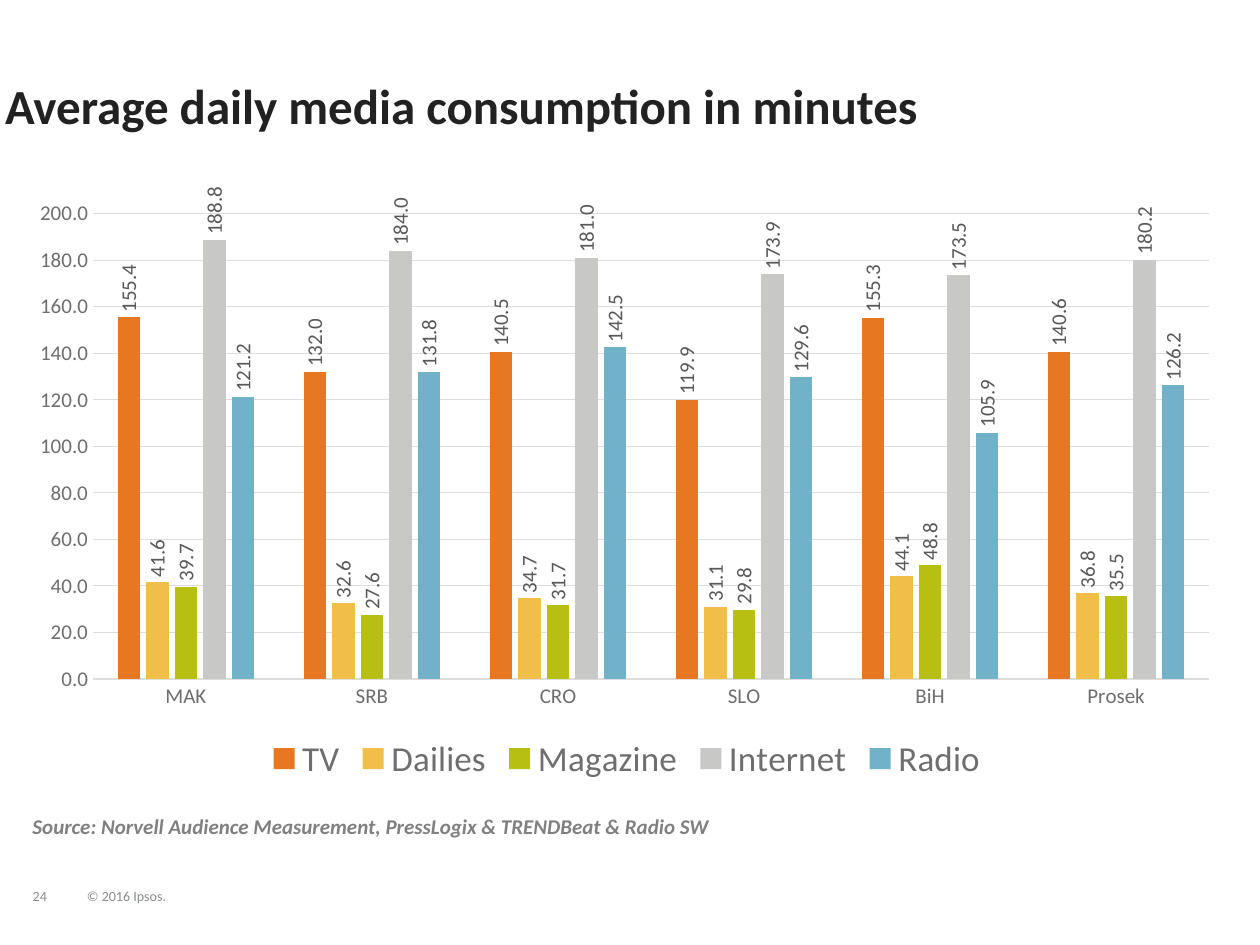
from lxml.etree import SubElement
from pptx import Presentation
from pptx.chart.data import CategoryChartData
from pptx.dml.color import RGBColor
from pptx.enum.chart import (XL_CHART_TYPE, XL_LABEL_POSITION,
                             XL_LEGEND_POSITION, XL_TICK_MARK)
from pptx.enum.text import MSO_ANCHOR
from pptx.oxml import parse_xml
from pptx.oxml.ns import nsdecls, qn
from pptx.util import Inches, Pt

FONT = "Calibri"
PALE, GREY, DARK = "DDDDDE", "6E6E71", "222223"
CATS = ["MAK", "SRB", "CRO", "SLO", "BiH", "Prosek"]
MEDIA = [
    ("TV", "E87722", [155.4, 132, 140.5, 119.9, 155.3, 140.6]),
    ("Dailies", "F1BE48", [41.6, 32.6, 34.7, 31.1, 44.1, 36.8]),
    ("Magazine", "B7BF12", [39.7, 27.6, 31.7, 29.8, 48.8, 35.5]),
    ("Internet", "C8C9C7", [188.8, 184, 181, 173.9, 173.5, 180.2]),
    ("Radio", "71B2C9", [121.2, 131.8, 142.5, 129.6, 105.9, 126.2]),
]


def rgb(code):
    return RGBColor.from_string(code)


def style(font, size, color, bold=False, italic=False):
    font.name, font.size = FONT, Pt(size)
    font.bold, font.italic = bold, italic
    font.color.rgb = rgb(color)


def rule(line):
    line.color.rgb = rgb(PALE)
    line.width = Pt(0.75)


def add_text(slide, box, text, size, color, bold=False, italic=False,
             inset=True, wrap=True):
    frame = slide.shapes.add_textbox(*map(Inches, box)).text_frame
    frame.word_wrap = wrap
    if not inset:
        frame.margin_left = frame.margin_right = 0
        frame.margin_top = frame.margin_bottom = 0
    para = frame.paragraphs[0]
    run = para.add_run()
    run.text = text
    style(run.font, size, color, bold, italic)
    return frame


def add_footer(slide, box, text):
    frame = add_text(slide, box, text, 8, "888B8D", inset=False, wrap=False)
    frame.vertical_anchor = MSO_ANCHOR.BOTTOM
    frame.paragraphs[0].line_spacing = 0.85


def place_plot(chart, x, y, w, h):
    """Fix the inner plot area, in fractions of the chart."""
    area = chart._chartSpace.find(".//" + qn("c:plotArea"))
    for old in area.findall(qn("c:layout")):
        area.remove(old)
    layout = parse_xml(f"<c:layout {nsdecls('c')}/>")
    manual = SubElement(layout, qn("c:manualLayout"))
    parts = [("layoutTarget", "inner"), ("xMode", "edge"), ("yMode", "edge"),
             ("x", x), ("y", y), ("w", w), ("h", h)]
    for tag, val in parts:
        SubElement(manual, qn("c:" + tag)).set("val", str(val))
    area.insert(0, layout)


def style_series(series, color):
    series.format.fill.solid()
    series.format.fill.fore_color.rgb = rgb(color)
    series.invert_if_negative = False
    labels = series.data_labels
    labels.show_value = True
    labels.number_format, labels.number_format_is_linked = "0.0", False
    labels.position = XL_LABEL_POSITION.OUTSIDE_END
    style(labels.font, 12, "58585B")
    body = labels._element.find(".//" + qn("a:bodyPr"))
    body.set("rot", "-5400000")
    body.set("vert", "horz")


def style_axes(chart):
    for axis in (chart.category_axis, chart.value_axis):
        axis.major_tick_mark = axis.minor_tick_mark = XL_TICK_MARK.NONE
        style(axis.tick_labels.font, 12, GREY)
    rule(chart.category_axis.format.line)
    value = chart.value_axis
    value.minimum_scale, value.maximum_scale, value.major_unit = 0, 200, 20
    value.format.line.fill.background()
    rule(value.major_gridlines.format.line)
    value.tick_labels.number_format = "0.0"
    value.tick_labels.number_format_is_linked = False


def add_bars(slide, box):
    data = CategoryChartData(number_format="0.0")
    data.categories = CATS
    for name, _, vals in MEDIA:
        data.add_series(name, vals)
    chart = slide.shapes.add_chart(
        XL_CHART_TYPE.COLUMN_CLUSTERED, *map(Inches, box), data).chart
    style(chart.font, 12, DARK)
    chart.has_title = False
    chart.has_legend = True
    chart.legend.position = XL_LEGEND_POSITION.BOTTOM
    chart.legend.include_in_layout = False
    style(chart.legend.font, 20, GREY)
    plot = chart.plots[0]
    plot.gap_width, plot.overlap = 219, -27
    plot.vary_by_categories = False
    for series, (_, color, _) in zip(plot.series, MEDIA):
        style_series(series, color)
    style_axes(chart)
    place_plot(chart, 0.06, 0.1, 0.92, 0.73)


def main():
    deck = Presentation()
    deck.slide_width, deck.slide_height = Inches(10), Inches(7.5)
    slide = deck.slides.add_slide(deck.slide_layouts[6])
    add_footer(slide, (0.26, 6.83, 0.34, 0.35), "24")
    add_footer(slide, (0.69, 6.93, 0.76, 0.25), "© 2016 Ipsos.")
    add_text(slide, (0.04, 0.6, 7.35, 0.59),
             "Average daily media consumption in minutes",
             28, DARK, bold=True, inset=False)
    add_bars(slide, (0.16, 1.19, 9.63, 5.06))
    add_text(slide, (0.16, 6.41, 8.83, 0.3),
             "Source: Norvell Audience Measurement, "
             "PressLogix & TRENDBeat & Radio SW",
             12, "808080", bold=True, italic=True)
    deck.save("out.pptx")


if __name__ == "__main__":
    main()
